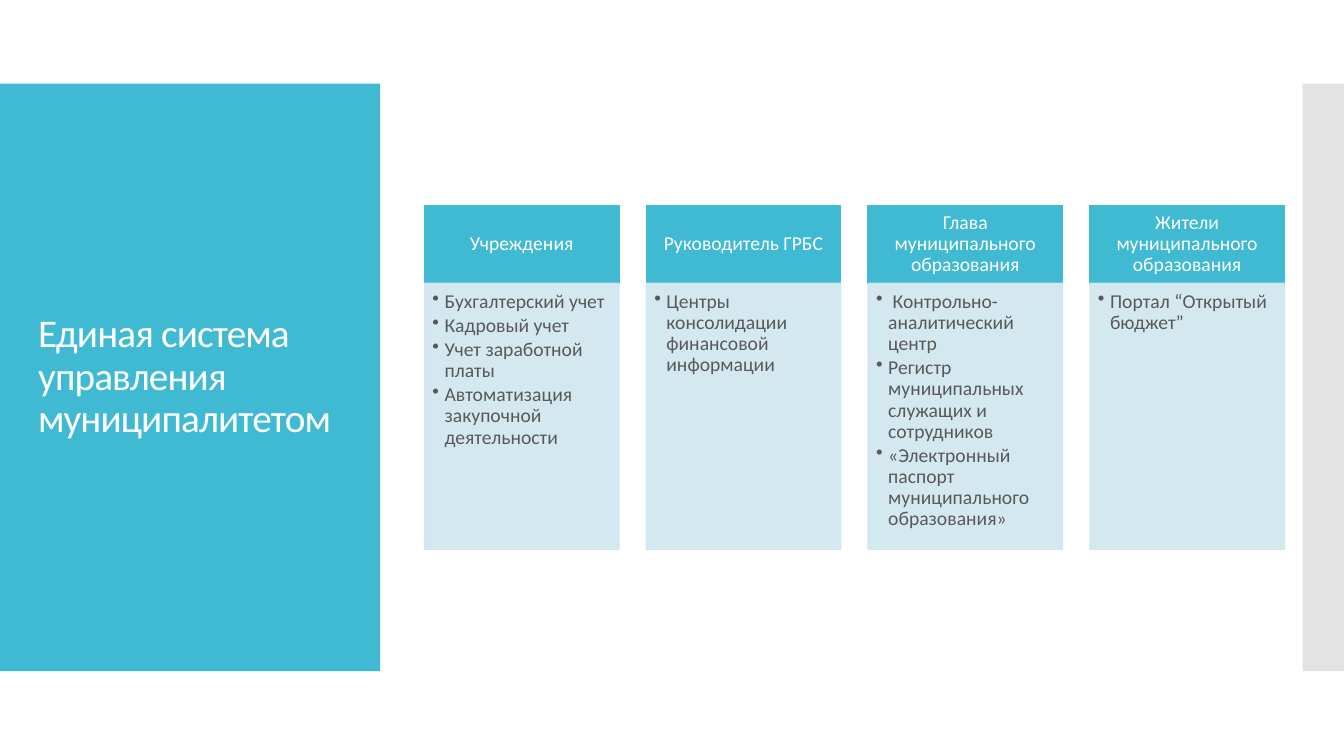
from lxml.etree import SubElement
from pptx import Presentation
from pptx.dml.color import RGBColor
from pptx.enum.shapes import MSO_SHAPE
from pptx.enum.text import MSO_ANCHOR, PP_ALIGN
from pptx.oxml.ns import qn
from pptx.util import Inches, Pt

TITLE = "Единая система управления муниципалитетом"
COLUMNS = [
    ("Учреждения", [
        "Бухгалтерский учет",
        "Кадровый учет",
        "Учет заработной платы",
        "Автоматизация закупочной деятельности",
    ]),
    ("Руководитель ГРБС", ["Центры консолидации финансовой информации"]),
    ("Глава муниципального образования", [
        " Контрольно-аналитический центр",
        "Регистр муниципальных служащих и сотрудников",
        "«Электронный паспорт муниципального образования»",
    ]),
    ("Жители муниципального образования", ["Портал “Открытый бюджет”"]),
]
TEAL, PALE, GREY, WHITE, DARK = "40BAD2", "CFE7EE", "C8C8C8", "FFFFFF", "595959"
FONT = "Calibri"
LEFT, STEP, WIDTH = 4.21, 2.2, 1.93
TOP, HEAD, BODY = 2.04, 0.77, 2.64
INDENT = 0.12


def paint(fill, color, alpha=100):
    fill.solid()
    fill.fore_color.rgb = RGBColor.from_string(color)
    if alpha < 100:
        tone = fill._xPr.find(qn("a:solidFill"))[0]
        SubElement(tone, qn("a:alpha"), val=str(alpha * 1000))


def block(box, color, alpha=100, edge=False):
    shape = slide.shapes.add_shape(MSO_SHAPE.RECTANGLE, *map(Inches, box))
    shape.shadow.inherit = False
    paint(shape.fill, color, alpha)
    if edge:
        paint(shape.line.fill, color, alpha)
        shape.line.width = Pt(0.85)
    else:
        shape.line.fill.background()
    return shape


def write(shape, lines, size, color, insets, anchor, align, after=0):
    frame = shape.text_frame
    frame.word_wrap = True
    frame.vertical_anchor = anchor
    (frame.margin_left, frame.margin_top,
     frame.margin_right, frame.margin_bottom) = map(Inches, insets)
    frame.text = "\n".join(lines)
    for para in frame.paragraphs:
        para.alignment = align
        para.line_spacing = 0.9
        para.space_after = Pt(after)
        para.font.size = Pt(size)
        para.font.name = FONT
        para.font.color.rgb = RGBColor.from_string(color)
    return frame.paragraphs


def bullet(para):
    props = para._p.get_or_add_pPr()
    props.set("marL", str(Inches(INDENT)))
    props.set("indent", str(-Inches(INDENT)))
    mark = SubElement(props, qn("a:buChar"), char="•")
    props.remove(mark)
    props.find(qn("a:defRPr")).addprevious(mark)


deck = Presentation()
deck.slide_width, deck.slide_height = Inches(13.33), Inches(7.5)
slide = deck.slides.add_slide(deck.slide_layouts[6])

block((0, 0.83, 3.77, 5.83), TEAL)
block((12.92, 0.83, 0.41, 5.83), GREY, 50)

title = slide.shapes.add_textbox(*map(Inches, (0.28, 1.23, 3.22, 5.03)))
for para in write(title, [TITLE], 28, WHITE, (0.1, 0.05, 0.1, 0.05),
                  MSO_ANCHOR.MIDDLE, PP_ALIGN.LEFT):
    for run in para.runs:
        run.font._element.set("spc", "-60")

for col, (name, items) in enumerate(COLUMNS):
    left = LEFT + col * STEP
    head = block((left, TOP, WIDTH, HEAD), TEAL, edge=True)
    write(head, [name], 14, WHITE, (0.11, 0.06, 0.11, 0.06),
          MSO_ANCHOR.MIDDLE, PP_ALIGN.CENTER)
    body = block((left, TOP + HEAD, WIDTH, BODY), PALE, 90, edge=True)
    for para in write(body, items, 14, DARK, (0.08, 0.08, 0.11, 0.12),
                      MSO_ANCHOR.TOP, PP_ALIGN.LEFT, 2.1):
        bullet(para)

deck.save("out.pptx")
